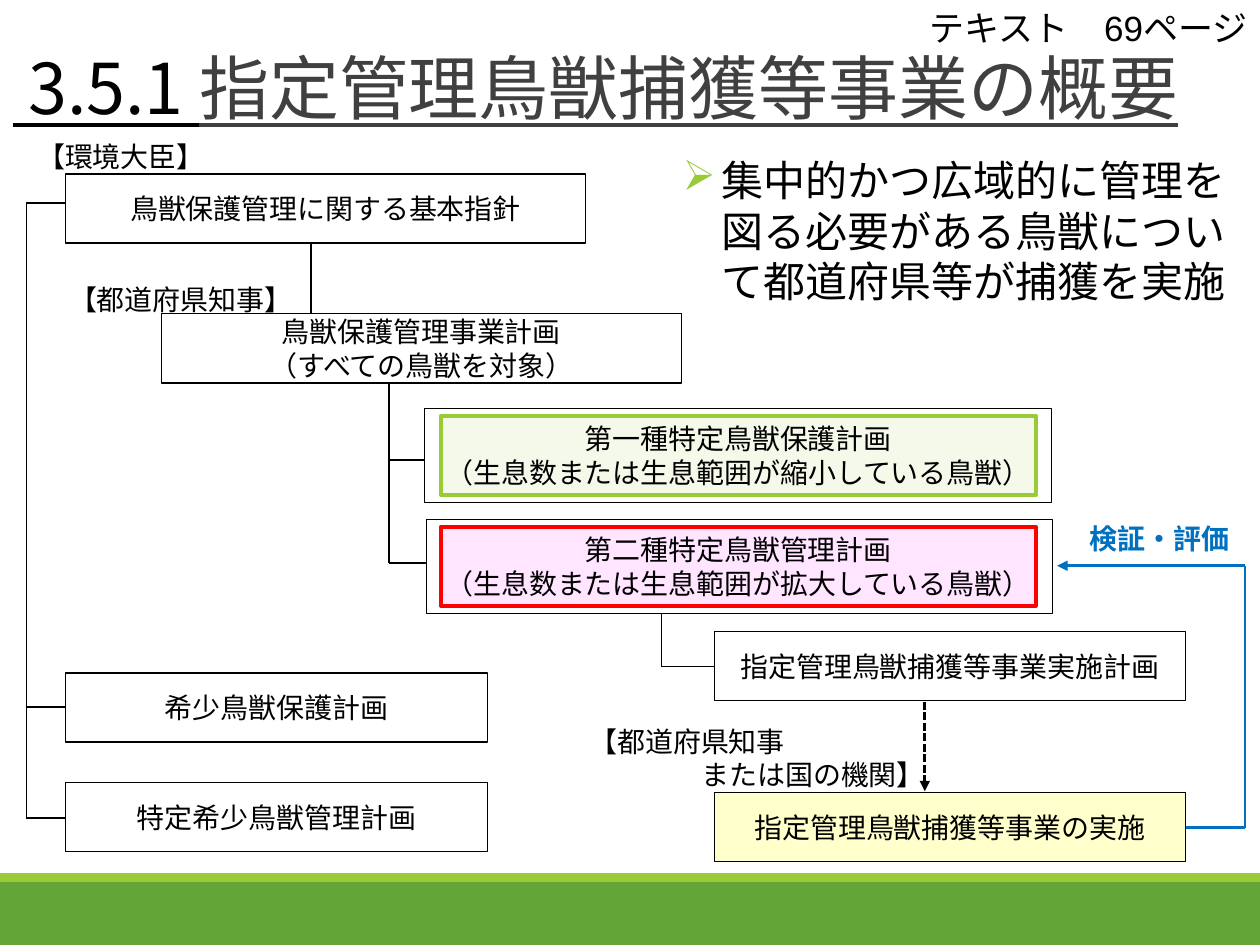
import pptx
import pptx.util
import pptx.dml.color
import pptx.enum.dml
import pptx.enum.shapes
import pptx.enum.text
import pptx.oxml
import pptx.oxml.ns
import lxml.etree

Inches = pptx.util.Inches
Pt = pptx.util.Pt
RGBColor = pptx.dml.color.RGBColor
PP_ALIGN = pptx.enum.text.PP_ALIGN
MSO_ANCHOR = pptx.enum.text.MSO_ANCHOR
MSO_AUTO_SIZE = pptx.enum.text.MSO_AUTO_SIZE
qn = pptx.oxml.ns.qn

BLACK = RGBColor(0x00, 0x00, 0x00)
WHITE = RGBColor(0xFF, 0xFF, 0xFF)
GRAY = RGBColor(0x40, 0x40, 0x40)
BLUE = RGBColor(0x00, 0x70, 0xC0)
RED = RGBColor(0xFF, 0x00, 0x00)
GREEN = RGBColor(0x63, 0xA5, 0x37)
LIME = RGBColor(0x99, 0xCB, 0x38)
PALE_GREEN = RGBColor(0xEB, 0xF5, 0xD7)
PINK = RGBColor(0xFF, 0xCC, 0xFF)
CREAM = RGBColor(0xFF, 0xFF, 0xCC)
GOTHIC = "Noto Sans CJK JP"
LATIN = "Calibri"


def add_run(paragraph, text, size=16, font=GOTHIC, color=BLACK, bold=False, underline=False):
    """Append a formatted run to a paragraph."""
    run = paragraph.add_run()
    run.text = text
    run.font.size = Pt(size)
    run.font.bold = bold
    run.font.underline = underline
    run.font.color.rgb = color
    run.font.name = font
    if font == GOTHIC:
        lxml.etree.SubElement(run.font._element, qn("a:ea"), typeface=font)


def write_lines(frame, lines, align=PP_ALIGN.CENTER, **run_format):
    """Write one paragraph per line with a shared format."""
    for index, line in enumerate(lines):
        paragraph = frame.add_paragraph() if index else frame.paragraphs[0]
        paragraph.alignment = align
        add_run(paragraph, line, **run_format)


def indent(paragraph, margin, first=0):
    """Set the left margin and first-line indent of a paragraph."""
    properties = paragraph._p.get_or_add_pPr()
    properties.set("marL", str(Inches(margin)))
    properties.set("indent", str(Inches(first)))
    return properties


def add_box(slide, place, lines=(), fill=WHITE, border=BLACK, weight=0.75, opacity=None):
    """Draw a rectangle with centred lines of text."""
    box = slide.shapes.add_shape(
        pptx.enum.shapes.MSO_SHAPE.RECTANGLE, *map(Inches, place))
    box.shadow.inherit = False
    box.fill.solid()
    box.fill.fore_color.rgb = fill
    if opacity:
        color = box._element.spPr.find(qn("a:solidFill"))[0]
        lxml.etree.SubElement(color, qn("a:alpha"), val=str(opacity * 1000))
    if border is None:
        box.line.fill.background()
    else:
        box.line.color.rgb = border
        box.line.width = Pt(weight)
    frame = box.text_frame
    frame.word_wrap = False
    frame.vertical_anchor = MSO_ANCHOR.MIDDLE
    write_lines(frame, lines)


def add_label(slide, place, lines, **text_format):
    """Add a text box and return its text frame."""
    frame = slide.shapes.add_textbox(*map(Inches, place)).text_frame
    frame.word_wrap = True
    write_lines(frame, lines, **text_format)
    return frame


def add_path(slide, points, color=BLACK, weight=1, arrow=False, dashed=False):
    """Join points with straight connectors, optionally ending in an arrow."""
    for start, end in zip(points, points[1:]):
        line = slide.shapes.add_connector(
            pptx.enum.shapes.MSO_CONNECTOR.STRAIGHT, *map(Inches, start + end))
        line.line.color.rgb = color
        line.line.width = Pt(weight)
        if dashed:
            line.line.dash_style = pptx.enum.dml.MSO_LINE.SQUARE_DOT
        if arrow and end == points[-1]:
            lxml.etree.SubElement(line.line._get_or_add_ln(), qn("a:tailEnd"), type="triangle")
        lxml.etree.SubElement(line._element.spPr, qn("a:effectLst"))


def add_title(slide):
    """Place and format the slide title."""
    title = slide.shapes.title
    title.left, title.top, title.width, title.height = map(Inches, (0, 0.4, 10.01, 0.66))
    frame = title.text_frame
    frame.auto_size = MSO_AUTO_SIZE.NONE
    frame.vertical_anchor = MSO_ANCHOR.MIDDLE
    heading = frame.paragraphs[0]
    heading.alignment = PP_ALIGN.LEFT
    heading.line_spacing = 0.9
    add_run(heading, " 3.5.1 ", size=40, underline=True)
    add_run(heading, "指定管理鳥獣捕獲等事業の概要", size=40, color=GRAY, underline=True)


def add_summary(slide):
    """Add the bulleted summary."""
    frame = add_label(
        slide, (5.32, 1.18, 4.73, 1.31),
        ["集中的かつ広域的に管理を図る必要がある鳥獣について都道府県等が捕獲を実施"],
        align=PP_ALIGN.LEFT, size=24, font=LATIN)
    properties = indent(frame.paragraphs[0], 0.31, -0.31)
    bullet_color = lxml.etree.SubElement(properties, qn("a:buClr"))
    lxml.etree.SubElement(bullet_color, qn("a:srgbClr"), val=str(LIME))
    lxml.etree.SubElement(properties, qn("a:buChar"), char="➢")


def add_tree_lines(slide):
    """Draw the branches between the plans."""
    add_path(slide, [(2.47, 1.89), (2.47, 2.49)])
    add_path(slide, [(0.52, 1.61), (0.21, 1.61), (0.21, 6.49), (0.52, 6.49)])
    add_path(slide, [(0.21, 5.61), (0.52, 5.61)])
    add_path(slide, [(3.09, 2.93), (3.09, 4.47), (3.5, 4.47)])
    add_path(slide, [(3.09, 3.65), (3.52, 3.65)])
    add_path(slide, [(5.25, 4.58), (5.25, 5.29), (5.67, 5.29)])
    add_path(slide, [(7.34, 5.57), (7.34, 6.28)], weight=1.5, arrow=True, dashed=True)
    add_path(slide, [(9.34, 6.57), (9.88, 6.57), (9.88, 4.49), (8.39, 4.49)],
             color=BLUE, weight=1.5, arrow=True)


def add_labels(slide):
    """Add the page reference and the names of those responsible."""
    add_label(slide, (7.1, 0, 2.9, 0.44), ["テキスト　69ページ"],
              align=PP_ALIGN.RIGHT, size=20, font="Arial")
    add_label(slide, (0.1, 1.06, 1.72, 0.37), ["【環境大臣】"], font=LATIN)
    add_label(slide, (0.38, 2.19, 2.11, 0.37), ["【都道府県知事】"], font=LATIN)
    agencies = add_label(slide, (4.58, 5.7, 3.81, 0.64),
                         ["【都道府県知事", "または国の機関】"],
                         align=PP_ALIGN.LEFT, font=LATIN)
    indent(agencies.paragraphs[1], 0.89)
    add_label(slide, (8.55, 4.09, 1.4, 0.37), ["検証・評価"],
              align=PP_ALIGN.LEFT, font=LATIN, color=BLUE, bold=True)


def add_plans(slide):
    """Draw the plan boxes."""
    for left, top, width, lines, fill in (
            (0.52, 1.38, 4.13, ["鳥獣保護管理に関する基本指針"], WHITE),
            (1.28, 2.49, 4.13, ["鳥獣保護管理事業計画", "（すべての鳥獣を対象）"], WHITE),
            (5.67, 5.01, 3.74, ["指定管理鳥獣捕獲等事業実施計画"], WHITE),
            (5.67, 6.29, 3.74, ["指定管理鳥獣捕獲等事業の実施"], CREAM),
            (0.52, 5.34, 3.35, ["希少鳥獣保護計画"], WHITE),
            (0.52, 6.21, 3.35, ["特定希少鳥獣管理計画"], WHITE)):
        add_box(slide, (left, top, width, 0.55), lines, fill)
    for left, top, kind, trend, fill, border in (
            (3.37, 3.24, "第一種特定鳥獣保護計画", "縮小", PALE_GREEN, LIME),
            (3.38, 4.12, "第二種特定鳥獣管理計画", "拡大", PINK, RED)):
        add_box(slide, (left, top, 4.97, 0.75), weight=0.25)
        add_box(slide, (3.5, top + 0.06, 4.72, 0.63),
                [kind, f"（生息数または生息範囲が{trend}している鳥獣）"],
                fill, border, weight=2.25, opacity=50)


def main():
    """Build the slide and save it."""
    deck = pptx.Presentation()
    deck.slide_width, deck.slide_height = Inches(10), Inches(7.5)
    slide = deck.slides.add_slide(deck.slide_layouts[5])
    add_box(slide, (0, 7, 10, 0.5), fill=GREEN, border=None)
    add_box(slide, (0, 6.93, 10, 0.07), fill=LIME, border=None)
    add_title(slide)
    add_tree_lines(slide)
    add_labels(slide)
    add_plans(slide)
    add_summary(slide)
    deck.save("out.pptx")


if __name__ == "__main__":
    main()
